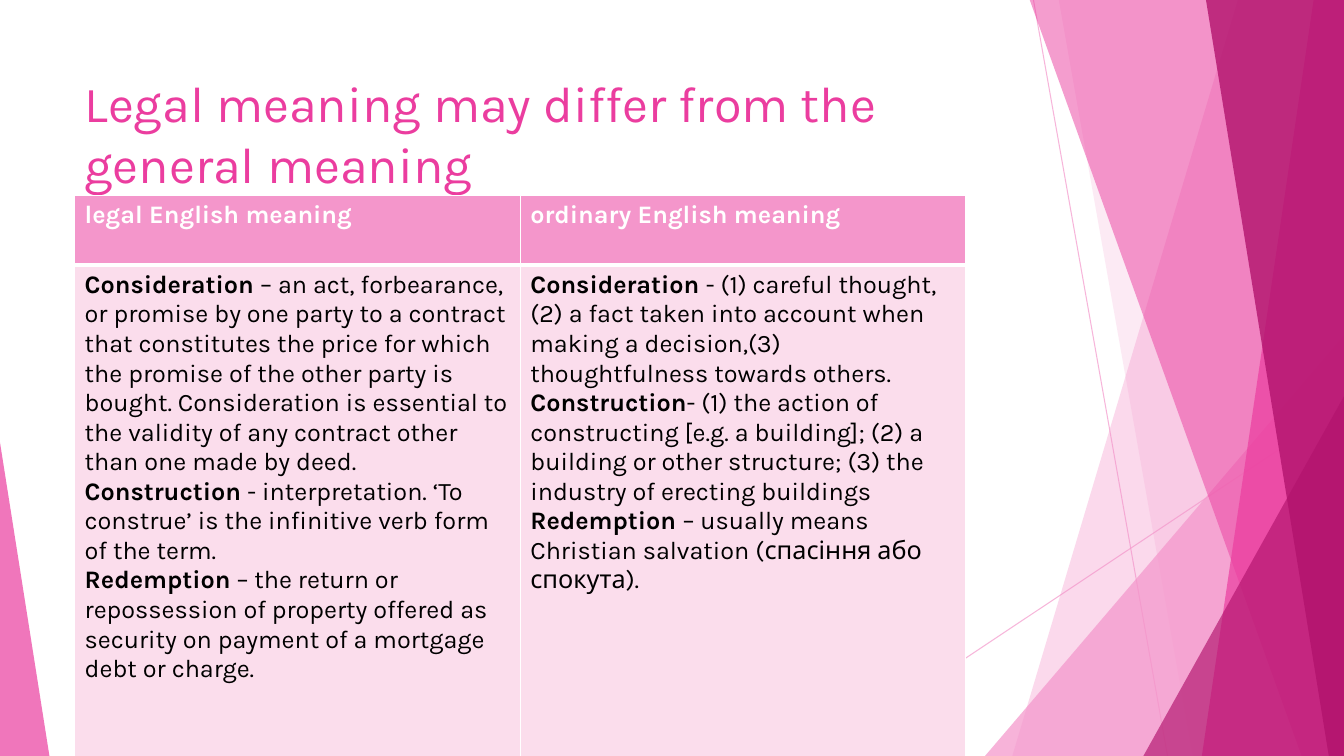
from dataclasses import dataclass

from lxml.etree import SubElement
from pptx import Presentation
from pptx.dml.color import RGBColor as RGB
from pptx.enum.shapes import MSO_CONNECTOR as LINK, MSO_SHAPE as KIND
from pptx.enum.text import MSO_ANCHOR as ANCHOR
from pptx.oxml.ns import qn
from pptx.util import Inches, Pt


@dataclass(frozen=True)
class Theme:
    font: str = "Karla"
    light: str = "F496CB"
    pink: str = "EB3D9F"
    dark: str = "B2136D"
    pale: str = "FBDDEC"
    white: str = "FFFFFF"
    black: str = "000000"
    title: int = 36
    body: int = 18


theme = Theme()
WIDE, HIGH, TOP = 13.33, 7.5, -0.01


def tint(fill, color, alpha):
    fill.solid()
    fill.fore_color.rgb = RGB.from_string(color)
    node = fill._xPr.find(".//" + qn("a:srgbClr"))
    SubElement(node, qn("a:alpha"), val=str(alpha * 1000))


def style(run, size, color, bold=False):
    font = run.font
    font.name, font.size, font.bold = theme.font, Pt(size), bold
    font.color.rgb = RGB.from_string(color)


deck = Presentation()
deck.slide_width, deck.slide_height = Inches(WIDE), Inches(HIGH)
slide = deck.slides.add_slide(deck.slide_layouts[6])
shapes = slide.shapes

# Thin crossing lines
for ends in [(10.25, 0, 11.58, HIGH), (WIDE, 4.03, 8.12, HIGH)]:
    line = shapes.add_connector(LINK.STRAIGHT, *map(Inches, ends))
    line.line.width = Pt(0.75)
    tint(line.line.fill, theme.light, 70)
    SubElement(line._element.spPr, qn("a:effectLst"))

# Facets: a band is (top x, bottom x) up to the right edge,
# a wedge is (left, top, width, apex) down to the bottom edge
facets = [
    ((12.28, 10.04), theme.light, 36),
    ((10.5, 11.83), theme.light, 20),
    ((9.77, 3.33, 3.56, 1), theme.light, 72),
    ((10.21, 12.91), theme.pink, 50),
    ((13.03, 11.92), theme.pink, 70),
    ((11.96, 13.18), theme.dark, 80),
    ((11.34, 3.93, 1.99, 1), theme.dark, 66),
    ((0, 4.39, 0.49, 0), theme.pink, 70),
]
for spot, color, alpha in facets:
    if len(spot) == 2:
        head, foot = spot
        form = shapes.build_freeform(Inches(head), Inches(TOP))
        ring = [(WIDE, TOP), (WIDE, HIGH), (foot, HIGH)]
        form.add_line_segments([(Inches(x), Inches(y)) for x, y in ring])
        facet = form.convert_to_shape()
    else:
        left, top, width, apex = spot
        facet = shapes.add_shape(KIND.ISOSCELES_TRIANGLE, Inches(left),
                                 Inches(top), Inches(width), Inches(HIGH - top))
        facet.adjustments[0] = apex
    tint(facet.fill, color, alpha)
    facet.line.fill.background()
    facet.shadow.inherit = False

# Title
box = shapes.add_textbox(Inches(0.74), Inches(0.67), Inches(9.4), Inches(1.44))
frame = box.text_frame
frame.word_wrap = True
frame.vertical_anchor = ANCHOR.TOP
frame.text = "Legal meaning may differ from the general meaning"
style(frame.paragraphs[0].runs[0], theme.title, theme.pink)

# Table content: each paragraph is a bold term and its plain meaning
heads = ["legal English meaning", "ordinary English meaning"]
legal = [
    ("Consideration ", "– an act, forbearance, or promise by one party to a "
     "contract that constitutes the price for which the promise of the other "
     "party is bought. Consideration is essential to the validity of any "
     "contract other than one made by deed."),
    ("Construction ", "- interpretation. ‘To construe’ is the infinitive verb "
     "form of the term."),
    ("Redemption", " – the return or repossession of property offered as "
     "security on payment of a mortgage debt or charge."),
]
plain = [
    ("Consideration ", "- (1) careful thought, (2) a fact taken into account "
     "when making a decision,(3) thoughtfulness towards others."),
    ("Construction", "- (1) the action of constructing [e.g. a building]; (2) a "
     "building or other structure; (3) the industry of erecting buildings"),
    ("Redemption ", "– usually means Christian salvation (спасіння або "
     "спокута)."),
]
rows = [
    (0.69, theme.light, theme.white, [[(head, "")] for head in heads]),
    (5.13, theme.pale, theme.black, [legal, plain]),
]

# Table
table = shapes.add_table(2, 2, Inches(0.74), Inches(1.94),
                         Inches(8.84), Inches(5.82)).table
for column in table.columns:
    column.width = Inches(4.42)
for r, (height, back, ink, texts) in enumerate(rows):
    table.rows[r].height = Inches(height)
    for c, terms in enumerate(texts):
        cell = table.cell(r, c)
        for n, (term, sense) in enumerate(terms):
            para = (cell.text_frame.add_paragraph() if n
                    else cell.text_frame.paragraphs[0])
            for text, bold in [(term, True), (sense, False)]:
                if text:
                    run = para.add_run()
                    run.text = text
                    style(run, theme.body, ink, bold)
        # White borders, heavy between header and body
        props = cell._tc.get_or_add_tcPr()
        for side in "LRTB":
            heavy = side == ("T" if r else "B")
            edge = SubElement(props, qn("a:ln" + side),
                              w=str(Pt(3 if heavy else 1)))
            paint = SubElement(edge, qn("a:solidFill"))
            SubElement(paint, qn("a:srgbClr"), val=theme.white)
        cell.fill.solid()
        cell.fill.fore_color.rgb = RGB.from_string(back)

deck.save("out.pptx")
